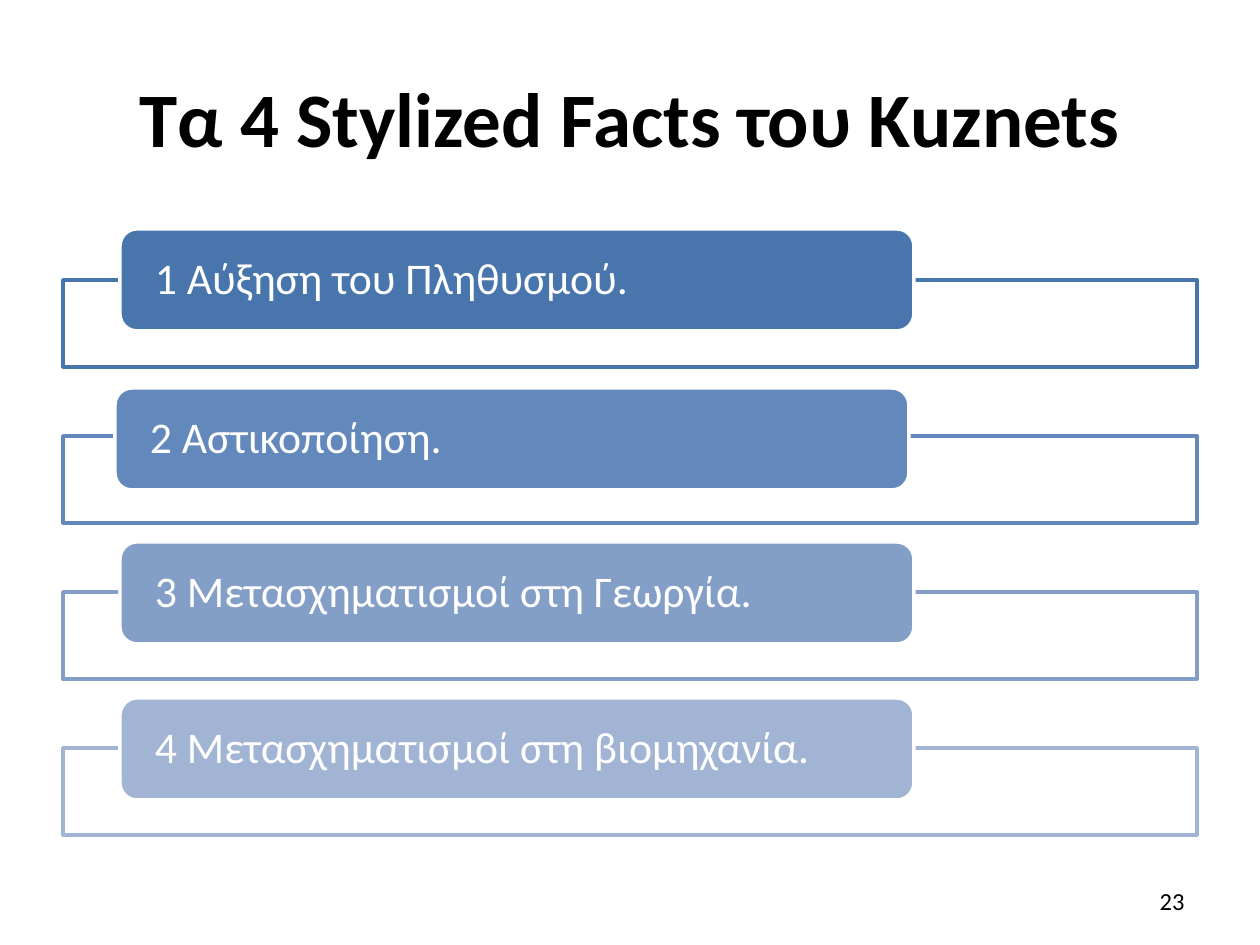
import dataclasses

import lxml.etree
import pptx
import pptx.dml.color
import pptx.enum.shapes
import pptx.enum.text
import pptx.oxml.ns
import pptx.util

PIXELS_PER_INCH = 126
FRAME_TOP = 280
ROW_STEP = 156
LABEL_RISE = 51
SHAPES = pptx.enum.shapes.MSO_SHAPE
ALIGN = pptx.enum.text.PP_ALIGN
MIDDLE = pptx.enum.text.MSO_ANCHOR.MIDDLE


@dataclasses.dataclass(frozen=True)
class Fact:
    text: str
    color: str
    label_left: int = 120
    label_drop: int = 0


@dataclasses.dataclass(frozen=True)
class Box:
    left: int
    top: int
    width: int
    height: int


FACTS = [
    Fact("1 Αύξηση του Πληθυσμού.", "4875AC"),
    Fact("2 Αστικοποίηση.", "6389BC", label_left=115, label_drop=3),
    Fact("3 Μετασχηματισμοί στη Γεωργία.", "839EC7", label_drop=1),
    Fact("4 Μετασχηματισμοί στη βιομηχανία.", "A2B4D4", label_drop=1),
]


def px(value: int) -> pptx.util.Emu:
    return pptx.util.Emu(round(value * 914400 / PIXELS_PER_INCH))


def rgb(color: str) -> pptx.dml.color.RGBColor:
    return pptx.dml.color.RGBColor.from_string(color)


def set_values(target, values: dict) -> None:
    for name, value in values.items():
        setattr(target, name, value)


def place(shape, box: Box) -> None:
    set_values(shape, {name: px(value) for name, value in dataclasses.asdict(box).items()})


def write_text(shape, text: str, size: int, color: str, alignment, bold: bool = False,
               line_spacing: float = 1.0) -> None:
    set_values(shape.text_frame, {"word_wrap": True, "vertical_anchor": MIDDLE})
    paragraph = shape.text_frame.paragraphs[0]
    set_values(paragraph, {"alignment": alignment, "line_spacing": line_spacing})
    run = paragraph.add_run()
    run.text = text
    set_values(run.font, {"name": "Calibri", "size": pptx.util.Pt(size), "bold": bold})
    run.font.color.rgb = rgb(color)


def add_box(slide, kind, box: Box, fill: str, line: str):
    shape = slide.shapes.add_shape(kind, *map(px, dataclasses.astuple(box)))
    shape.shadow.inherit = False
    shape.fill.solid()
    shape.fill.fore_color.rgb = rgb(fill)
    shape.line.color.rgb = rgb(line)
    shape.line.width = pptx.util.Pt(2)
    return shape


def set_opacity(shape, percent: int) -> None:
    qualified = pptx.oxml.ns.qn
    color = shape.fill._xPr.find(qualified("a:solidFill")).find(qualified("a:srgbClr"))
    lxml.etree.SubElement(color, qualified("a:alpha"), val=str(percent * 1000))


def draw_fact(slide, fact: Fact, frame_top: int) -> None:
    frame = add_box(slide, SHAPES.RECTANGLE, Box(63, frame_top, 1134, 87), "FFFFFF", fact.color)
    set_opacity(frame, 90)
    label_top = frame_top - LABEL_RISE + fact.label_drop
    label = add_box(slide, SHAPES.ROUNDED_RECTANGLE, Box(fact.label_left, label_top, 794, 102),
                    fact.color, "FFFFFF")
    set_values(label.text_frame, {"margin_left": px(30), "margin_right": px(30),
                                  "margin_top": 0, "margin_bottom": 0})
    write_text(label, fact.text, 25, "FFFFFF", ALIGN.LEFT, line_spacing=0.9)


def main() -> None:
    presentation = pptx.Presentation()
    set_values(presentation, {"slide_width": px(1260), "slide_height": px(945)})
    slide = presentation.slides.add_slide(presentation.slide_layouts[5])
    title = slide.shapes.title
    place(title, Box(63, 38, 1134, 157))
    write_text(title, "Τα 4 Stylized Facts του Kuznets", 44, "000000", ALIGN.CENTER, bold=True)
    for row, fact in enumerate(FACTS):
        draw_fact(slide, fact, FRAME_TOP + row * ROW_STEP)
    number_box = Box(903, 876, 294, 50)
    page_number = slide.shapes.add_textbox(*map(px, dataclasses.astuple(number_box)))
    write_text(page_number, "23", 14, "000000", ALIGN.RIGHT)
    presentation.save("out.pptx")


if __name__ == "__main__":
    main()
